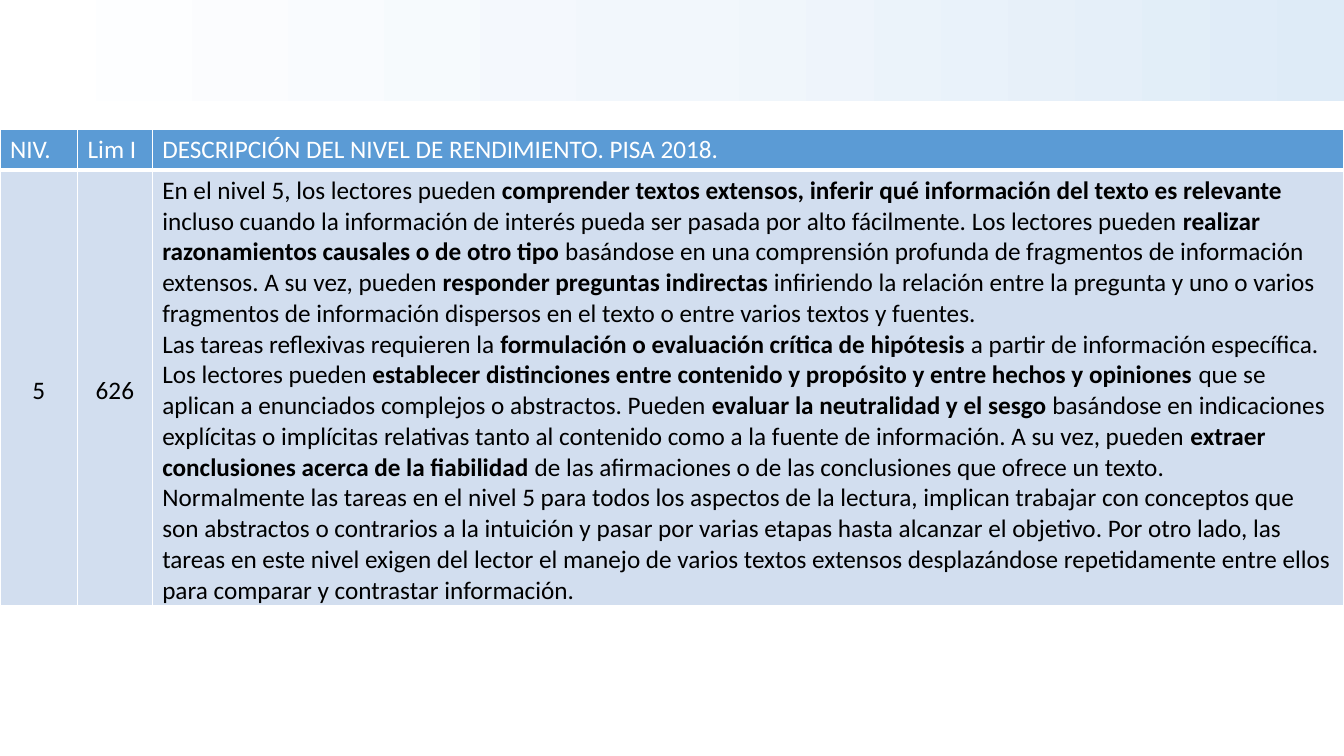
from copy import deepcopy
from lxml import etree
from pptx import Presentation
from pptx.dml.color import RGBColor
from pptx.enum.shapes import MSO_SHAPE
from pptx.enum.text import MSO_ANCHOR, PP_ALIGN
from pptx.oxml.ns import qn
from pptx.util import Inches, Pt

RECT = MSO_SHAPE.RECTANGLE
MIDDLE, TOP = MSO_ANCHOR.MIDDLE, MSO_ANCHOR.TOP
CENTER, LEFT = PP_ALIGN.CENTER, PP_ALIGN.LEFT
WHITE = RGBColor(0xFF, 0xFF, 0xFF)
BLACK = RGBColor(0, 0, 0)
BLUE = RGBColor(0x5B, 0x9B, 0xD5)
PALE = RGBColor(0xD2, 0xDE, 0xEF)
BAND_COLORS = [RGBColor(0xDE, 0xEB, 0xF7), RGBColor(0xF2, 0xF7, 0xFC), WHITE]

HEADER = ["NIV.", "Lim I", "DESCRIPCIÓN DEL NIVEL DE RENDIMIENTO. PISA 2018."]
DESCRIPTION = [
    ["En el nivel 5, los lectores pueden ",
     "comprender textos extensos, inferir qué información del texto es relevante",
     " incluso cuando la información de interés pueda ser pasada por alto fácilmente. "
     "Los lectores pueden ",
     "realizar razonamientos causales o de otro tipo",
     " basándose en una comprensión profunda de fragmentos de información extensos. "
     "A su vez, pueden ",
     "responder preguntas indirectas",
     " infiriendo la relación entre la pregunta y uno o varios fragmentos de información "
     "dispersos en el texto o entre varios textos y fuentes."],
    ["Las tareas reflexivas requieren la ",
     "formulación o evaluación crítica de hipótesis",
     " a partir de información específica. Los lectores pueden",
     " establecer distinciones entre contenido y propósito y entre hechos y opiniones ",
     "que se aplican a enunciados complejos o abstractos. Pueden ",
     "evaluar la neutralidad y el sesgo ",
     "basándose en indicaciones explícitas o implícitas relativas tanto al contenido como "
     "a la fuente de información. A su vez, pueden ",
     "extraer conclusiones acerca de la fiabilidad",
     " de las afirmaciones o de las conclusiones que ofrece un texto."],
    ["Normalmente las tareas en el nivel 5 para todos los aspectos de la lectura, implican "
     "trabajar con conceptos que son abstractos o contrarios a la intuición y pasar por "
     "varias etapas hasta alcanzar el objetivo. Por otro lado, las tareas en este nivel "
     "exigen del lector el manejo de varios textos extensos desplazándose repetidamente "
     "entre ellos para comparar y contrastar información."],
]
ROWS = [[[[text]] for text in HEADER], [[["5"]], [["626"]], DESCRIPTION]]
COLUMN_WIDTHS = [0.77, 0.74, 11.82]
ROW_HEIGHTS = [0.41, 4.3]
TABLE_TOP = 1.28


def add_borders(cell, bottom):
    tcPr = cell._tc.get_or_add_tcPr()
    for i, (side, width) in enumerate([("L", 1), ("R", 1), ("T", 1), ("B", bottom)]):
        ln = etree.Element(qn("a:ln" + side), w=str(Pt(width)))
        fill = etree.SubElement(ln, qn("a:solidFill"))
        etree.SubElement(fill, qn("a:srgbClr"), val=str(WHITE))
        tcPr.insert(i, ln)


def fill_cell(cell, paragraphs, color):
    tf = cell.text_frame
    for i, parts in enumerate(paragraphs):
        p = tf.add_paragraph() if i else tf.paragraphs[0]
        p.font.name, p.font.size = "Calibri", Pt(18)
        p.font.color.rgb = color
        for j, text in enumerate(parts):
            r = p.add_run()
            r.text = text
            r.font.bold = j % 2 == 1


prs = Presentation()
prs.slide_width, prs.slide_height = Inches(13.33), Inches(7.5)
s = prs.slides.add_slide(prs.slide_layouts[6])

band = s.shapes.add_shape(RECT, 0, 0, prs.slide_width, Inches(1))
band.shadow.inherit = False
band.line.fill.background()
band.fill.gradient()
band.fill.gradient_angle = 180
stops = band._element.spPr.find(".//" + qn("a:gsLst"))
stops.insert(1, deepcopy(stops[0]))
for i, (stop, color) in enumerate(zip(band.fill.gradient_stops, BAND_COLORS)):
    stop.position = i / 2
    stop.color.rgb = color

table = s.shapes.add_table(len(ROWS), len(HEADER), 0, Inches(TABLE_TOP),
                           prs.slide_width, Inches(sum(ROW_HEIGHTS))).table
table.first_row = table.horz_banding = False
for column, width in zip(table.columns, COLUMN_WIDTHS):
    column.width = Inches(width)
for y, (row, height) in enumerate(zip(ROWS, ROW_HEIGHTS)):
    table.rows[y].height = Inches(height)
    for x, paragraphs in enumerate(row):
        cell = table.cell(y, x)
        is_number = y == 1 and x < 2
        fill_cell(cell, paragraphs, BLACK if y else WHITE)
        cell.fill.solid()
        cell.fill.fore_color.rgb = PALE if y else BLUE
        cell.vertical_anchor = MIDDLE if is_number else TOP
        cell.text_frame.paragraphs[0].alignment = CENTER if is_number else LEFT
        if y:
            cell.margin_bottom = 0
        add_borders(cell, 1 if y else 3)

prs.save("out.pptx")
